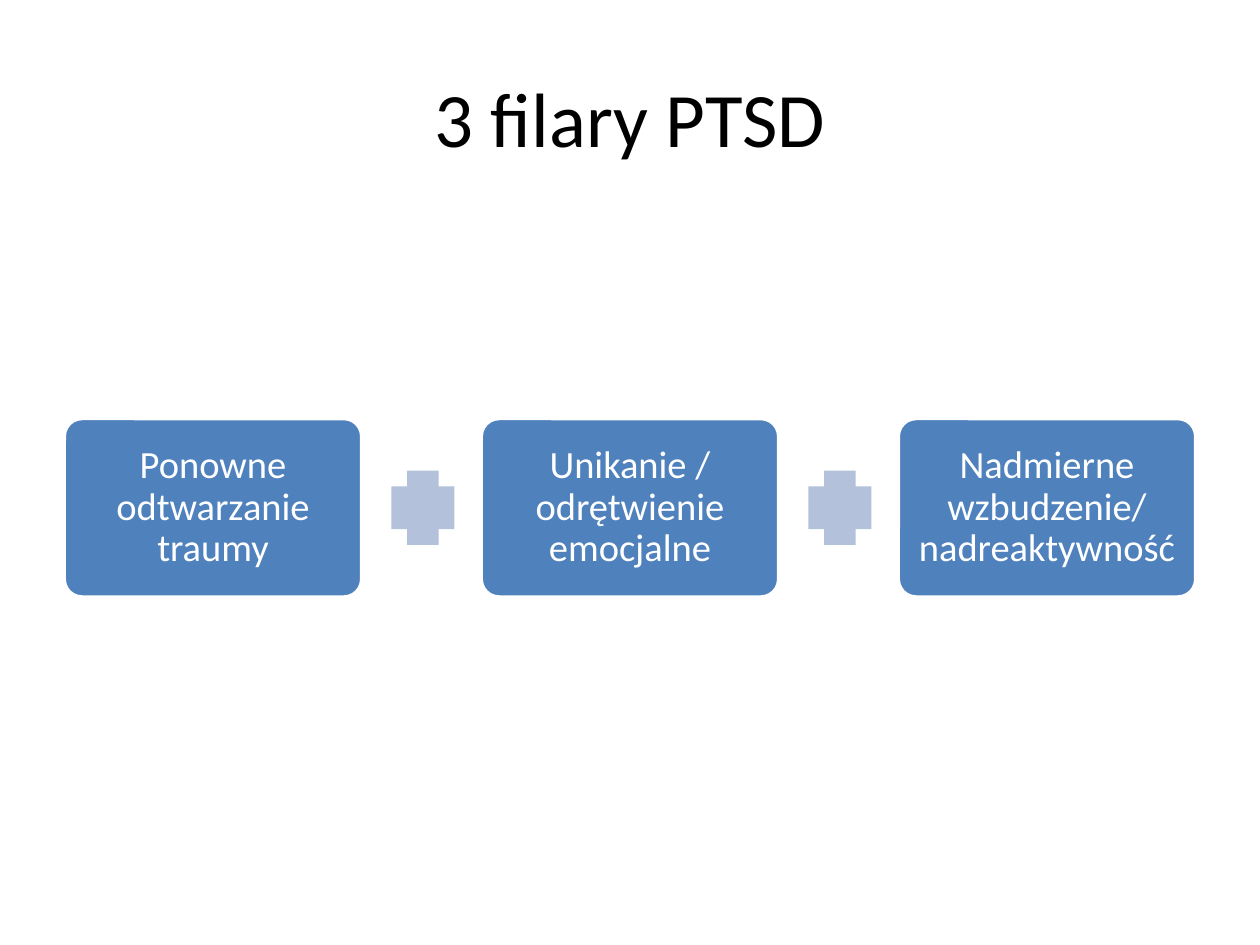
from dataclasses import dataclass

import pptx
import pptx.dml.color
import pptx.enum.shapes
import pptx.enum.text
import pptx.util

Pt = pptx.util.Pt
RGB = pptx.dml.color.RGBColor
MSO_SHAPE = pptx.enum.shapes.MSO_SHAPE


@dataclass(frozen=True)
class Theme:
    font: str = "Calibri"
    title_size: float = 44
    pillar_size: float = 22
    title_color: RGB = RGB(0x00, 0x00, 0x00)
    pillar_color: RGB = RGB(0x4F, 0x81, 0xBD)
    plus_color: RGB = RGB(0xB3, 0xC1, 0xDB)
    white: RGB = RGB(0xFF, 0xFF, 0xFF)


THEME = Theme()
PILLARS = [
    "Ponowne odtwarzanie traumy",
    "Unikanie / odrętwienie emocjalne",
    "Nadmierne wzbudzenie/ nadreaktywność",
]


def set_text(sp, text, size, color):
    """Write one centred paragraph in the middle of the shape."""
    tf = sp.text_frame
    tf.word_wrap = True
    tf.vertical_anchor = pptx.enum.text.MSO_ANCHOR.MIDDLE
    p = tf.paragraphs[0]
    p.text = text
    p.alignment = pptx.enum.text.PP_ALIGN.CENTER
    p.font.name = THEME.font
    p.font.size = Pt(size)
    p.font.color.rgb = color
    return tf


def add_title(s, text, x, y, w, h):
    sp = s.shapes.add_textbox(Pt(x), Pt(y), Pt(w), Pt(h))
    set_text(sp, text, THEME.title_size, THEME.title_color)


def add_filled(s, kind, x, y, w, h, color):
    sp = s.shapes.add_shape(kind, Pt(x), Pt(y), Pt(w), Pt(h))
    sp.shadow.inherit = False
    sp.fill.solid()
    sp.fill.fore_color.rgb = color
    sp.line.fill.background()
    return sp


def add_pillar(s, text, x, y, w, h):
    sp = add_filled(s, MSO_SHAPE.ROUNDED_RECTANGLE, x, y, w, h, THEME.pillar_color)
    sp.adjustments[0] = 0.1
    sp.line.color.rgb = THEME.white
    sp.line.width = Pt(2)
    tf = set_text(sp, text, THEME.pillar_size, THEME.white)
    tf.margin_left = tf.margin_right = tf.margin_top = tf.margin_bottom = Pt(3.6)
    tf.paragraphs[0].line_spacing = 0.9


def add_pillar_row(s, texts, x, y, w, h, pillar_w=170, plus_w=36, plus_h=42.4):
    """Spread the pillars over the width, with a plus sign in each gap."""
    pitch = (w - pillar_w) / (len(texts) - 1)
    for i, text in enumerate(texts):
        left = x + i * pitch
        if i:
            plus_x = left - pitch + 1.1 * pillar_w
            add_filled(s, MSO_SHAPE.CROSS, plus_x, y + (h - plus_h) / 2,
                       plus_w, plus_h, THEME.plus_color)
        add_pillar(s, text, left, y, pillar_w, h)


def main():
    prs = pptx.Presentation()
    prs.slide_width, prs.slide_height = Pt(720), Pt(540)
    s = prs.slides.add_slide(prs.slide_layouts[6])
    add_title(s, "3 filary PTSD", 36, 21.6, 648, 90)
    add_pillar_row(s, PILLARS, 36.7, 239.2, 646.6, 102)
    prs.save("out.pptx")


if __name__ == "__main__":
    main()
